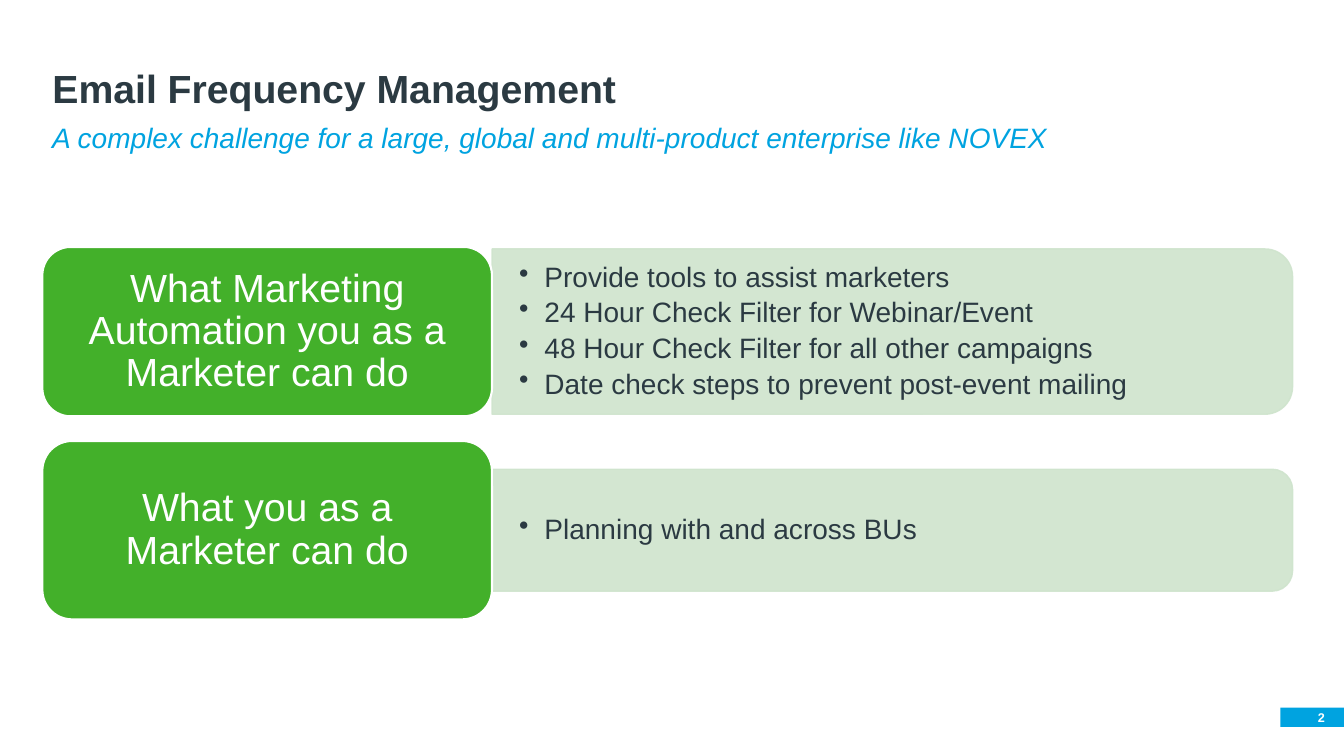
"""Build the email frequency management slide."""
import dataclasses

import lxml.etree
import pptx
import pptx.dml.color
import pptx.enum.shapes
import pptx.enum.text
import pptx.oxml.ns
import pptx.util

Inches = pptx.util.Inches
Pt = pptx.util.Pt
Shapes = pptx.enum.shapes.MSO_SHAPE
Align = pptx.enum.text.PP_ALIGN
Anchor = pptx.enum.text.MSO_ANCHOR

INK, BLUE, GREEN, MINT, WHITE = "2B3A42", "00A3E0", "43B02A", "CFE4CD", "FFFFFF"
MARGIN, CONTENT_WIDTH = 0.42, 12.4
HEADING_WIDTH = 4.46
PANEL_LEFT = MARGIN + HEADING_WIDTH
PANEL_WIDTH = CONTENT_WIDTH - HEADING_WIDTH


@dataclasses.dataclass
class Band:
    heading: str
    points: list[str]
    middle: float
    heading_height: float
    panel_height: float


@dataclasses.dataclass
class Style:
    size: float
    colour: str
    bold: bool = False
    italic: bool = False
    align: Align = Align.LEFT
    anchor: Anchor = Anchor.TOP
    insets: tuple[float, float, float, float] = (0.1, 0.05, 0.1, 0.05)
    line_spacing: float = 0.9
    space_after: float = 0
    bullet: bool = False


BANDS = [
    Band(
        "What Marketing Automation you as a Marketer can do",
        [
            "Provide tools to assist marketers",
            "24 Hour Check Filter for Webinar/Event",
            "48 Hour Check Filter for all other campaigns",
            "Date check steps to prevent post-event mailing",
        ],
        3.29, 1.68, 1.64,
    ),
    Band("What you as a Marketer can do", ["Planning with and across BUs"], 5.26, 1.77, 1.21),
]
TITLE = Style(28, INK, bold=True, anchor=Anchor.BOTTOM)
SUBTITLE = Style(20, BLUE, italic=True)
HEADING = Style(28, WHITE, align=Align.CENTER, anchor=Anchor.MIDDLE, insets=(0.2, 0.14, 0.2, 0.14))
POINTS = Style(20, INK, anchor=Anchor.MIDDLE, insets=(0.27, 0.14, 0.27, 0.14),
               space_after=3.8, bullet=True)
NUMBER = Style(9, WHITE, bold=True, align=Align.RIGHT, anchor=Anchor.MIDDLE,
               insets=(0, 0, 0.19, 0), line_spacing=1)


def rgb(colour: str) -> pptx.dml.color.RGBColor:
    """Turn a hex string into a colour."""
    return pptx.dml.color.RGBColor.from_string(colour)


def add_bullet(para) -> None:
    """Give a paragraph a hanging round bullet."""
    properties = para._p.get_or_add_pPr()
    properties.set("marL", str(Inches(0.25)))
    properties.set("indent", str(-Inches(0.25)))
    mark = lxml.etree.SubElement(properties, pptx.oxml.ns.qn("a:buChar"))
    mark.set("char", "•")


def write(shape, lines: list[str], style: Style) -> None:
    """Write lines into a shape and format them."""
    frame = shape.text_frame
    frame.text = "\n".join(lines)
    frame.word_wrap = True
    frame.auto_size = pptx.enum.text.MSO_AUTO_SIZE.NONE
    frame.vertical_anchor = style.anchor
    frame.margin_left, frame.margin_top, frame.margin_right, frame.margin_bottom = map(
        Inches, style.insets)
    for para in frame.paragraphs:
        if style.bullet:
            add_bullet(para)
        para.alignment = style.align
        para.line_spacing = style.line_spacing
        para.space_before = Pt(0)
        para.space_after = Pt(style.space_after)
        for span in para.runs:
            span.font.name = "Arial"
            span.font.size = Pt(style.size)
            span.font.bold = style.bold
            span.font.italic = style.italic
            span.font.color.rgb = rgb(style.colour)


def add_text(page, left: float, top: float, width: float, height: float,
             lines: list[str], style: Style) -> None:
    """Add a text box."""
    box = page.shapes.add_textbox(Inches(left), Inches(top), Inches(width), Inches(height))
    write(box, lines, style)


def add_block(page, preset: Shapes, left: float, top: float, width: float, height: float,
              fill: str, line: str | None = None, line_width: float = 1):
    """Add a filled preset shape without shadow."""
    block = page.shapes.add_shape(
        preset, Inches(left), Inches(top), Inches(width), Inches(height))
    block.shadow.inherit = False
    block.fill.solid()
    block.fill.fore_color.rgb = rgb(fill)
    if line:
        block.line.color.rgb = rgb(line)
        block.line.width = Pt(line_width)
    else:
        block.line.fill.background()
    return block


def add_band(page, band: Band) -> None:
    """Draw a pale panel with its points and the heading beside it."""
    panel = add_block(
        page, Shapes.ROUND_2_SAME_RECTANGLE,
        PANEL_LEFT + (PANEL_WIDTH - band.panel_height) / 2, band.middle - PANEL_WIDTH / 2,
        band.panel_height, PANEL_WIDTH, MINT, MINT)
    panel.rotation = 90
    for colour in panel._element.spPr.iter(pptx.oxml.ns.qn("a:srgbClr")):
        lxml.etree.SubElement(colour, pptx.oxml.ns.qn("a:alpha")).set("val", "90000")
    add_text(page, PANEL_LEFT, band.middle - band.panel_height / 2, PANEL_WIDTH,
             band.panel_height, band.points, POINTS)
    heading = add_block(
        page, Shapes.ROUNDED_RECTANGLE, MARGIN, band.middle - band.heading_height / 2,
        HEADING_WIDTH, band.heading_height, GREEN, WHITE, 1.5)
    write(heading, [band.heading], HEADING)


def main() -> None:
    """Build and save the deck."""
    deck = pptx.Presentation()
    deck.slide_width, deck.slide_height = Inches(13.33), Inches(7.5)
    page = deck.slides.add_slide(deck.slide_layouts.get_by_name("Title Only"))
    title = page.shapes.title
    title.left, title.top = Inches(MARGIN), Inches(0.32)
    title.width, title.height = Inches(CONTENT_WIDTH), Inches(0.84)
    write(title, ["Email Frequency Management"], TITLE)
    add_text(page, MARGIN, 1.18, CONTENT_WIDTH, 0.44,
             ["A complex challenge for a large, global and multi-product enterprise like NOVEX"],
             SUBTITLE)
    for band in BANDS:
        add_band(page, band)
    tab = add_block(page, Shapes.RECTANGLE, 12.7, 7.02, 0.63, 0.19, BLUE)
    write(tab, ["2"], NUMBER)
    deck.save("out.pptx")


if __name__ == "__main__":
    main()
